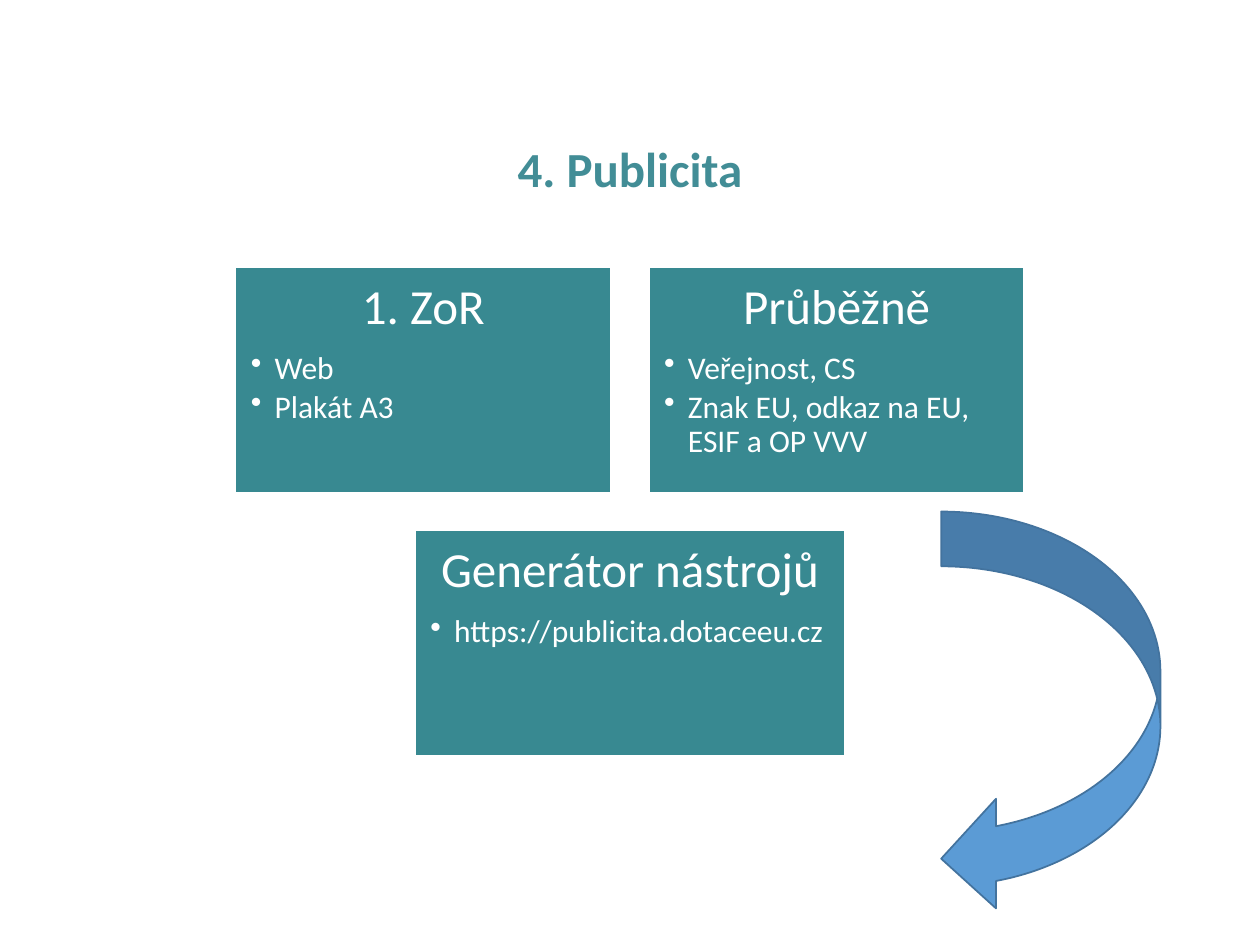
"""Build the "4. Publicita" slide with three topic cards and a curved arrow."""
import dataclasses

import lxml.etree
import pptx
import pptx.dml.color
import pptx.enum.shapes
import pptx.enum.text
import pptx.oxml.ns
import pptx.util

Inches = pptx.util.Inches
Pt = pptx.util.Pt
Shape = pptx.enum.shapes.MSO_SHAPE
Align = pptx.enum.text.PP_ALIGN
Anchor = pptx.enum.text.MSO_ANCHOR


@dataclasses.dataclass(frozen=True)
class Theme:
    font: str = "Calibri"
    title: str = "428D96"
    card: str = "388991"
    white: str = "FFFFFF"
    arrow: str = "5B9BD5"
    arrow_line: str = "43739E"
    heading_size: float = 28
    bullet_size: float = 18
    line_spacing: float = 0.9


class SlideBuilder:
    def __init__(self, slide, theme):
        self.slide = slide
        self.theme = theme

    def text(self, para, words, size, color, bold=False):
        para.line_spacing = self.theme.line_spacing
        span = para.add_run()
        span.text = words
        span.font.name = self.theme.font
        span.font.size = Pt(size)
        span.font.bold = bold
        span.font.color.rgb = pptx.dml.color.RGBColor.from_string(color)

    def shape(self, kind, place, fill, line):
        shape = self.slide.shapes.add_shape(kind, *map(Inches, place))
        shape.shadow.inherit = False
        shape.fill.solid()
        shape.fill.fore_color.rgb = pptx.dml.color.RGBColor.from_string(fill)
        shape.line.color.rgb = pptx.dml.color.RGBColor.from_string(line)
        shape.line.width = Pt(1)
        return shape

    def title(self, words, place):
        box = self.slide.shapes.add_textbox(*map(Inches, place))
        frame = box.text_frame
        frame.word_wrap = True
        frame.vertical_anchor = Anchor.MIDDLE
        para = frame.paragraphs[0]
        para.alignment = Align.CENTER
        self.text(para, words, self.theme.heading_size, self.theme.title, bold=True)

    def bullet(self, frame, words):
        para = frame.add_paragraph()
        para.alignment = Align.LEFT
        para.level = 1
        para.space_after = Pt(0.15 * self.theme.bullet_size)
        properties = para._p.get_or_add_pPr()
        properties.set("marL", str(Inches(0.19)))
        properties.set("indent", str(Inches(-0.19)))
        mark = lxml.etree.SubElement(properties, pptx.oxml.ns.qn("a:buChar"))
        mark.set("char", "•")
        self.text(para, words, self.theme.bullet_size, self.theme.white)

    def card(self, heading, bullets, place):
        theme = self.theme
        card = self.shape(Shape.RECTANGLE, place, theme.card, theme.white)
        frame = card.text_frame
        frame.word_wrap = True
        frame.vertical_anchor = Anchor.TOP
        frame.margin_left = frame.margin_right = Inches(0.12)
        frame.margin_top = frame.margin_bottom = Inches(0.12)
        para = frame.paragraphs[0]
        para.alignment = Align.CENTER
        para.space_after = Pt(0.35 * theme.heading_size)
        self.text(para, heading, theme.heading_size, theme.white)
        for words in bullets:
            self.bullet(frame, words)

    def arrow(self, place):
        self.shape(Shape.CURVED_LEFT_ARROW, place, self.theme.arrow, self.theme.arrow_line)


def main():
    deck = pptx.Presentation()
    deck.slide_width, deck.slide_height = Inches(10), Inches(7.5)
    page = SlideBuilder(deck.slides.add_slide(deck.slide_layouts[6]), Theme())
    page.title("4. Publicita", (0.69, 0.87, 8.62, 0.98))

    top, height, gap = 2.12, 1.79, 0.3
    rows = [
        (2.98, [
            ("1. ZoR", ["Web", "Plakát A3"]),
            ("Průběžně", ["Veřejnost, CS", "Znak EU, odkaz na EU, ESIF a OP VVV"]),
        ]),
        (3.41, [("Generátor nástrojů", ["https://publicita.dotaceeu.cz"])]),
    ]
    for row, (width, cards) in enumerate(rows):
        left = (10 - len(cards) * (width + gap) + gap) / 2
        for column, (heading, bullets) in enumerate(cards):
            place = (left + column * (width + gap), top + row * (height + gap), width, height)
            page.card(heading, bullets, place)

    page.arrow((7.47, 4.06, 1.74, 3.19))
    deck.save("out.pptx")


if __name__ == "__main__":
    main()
